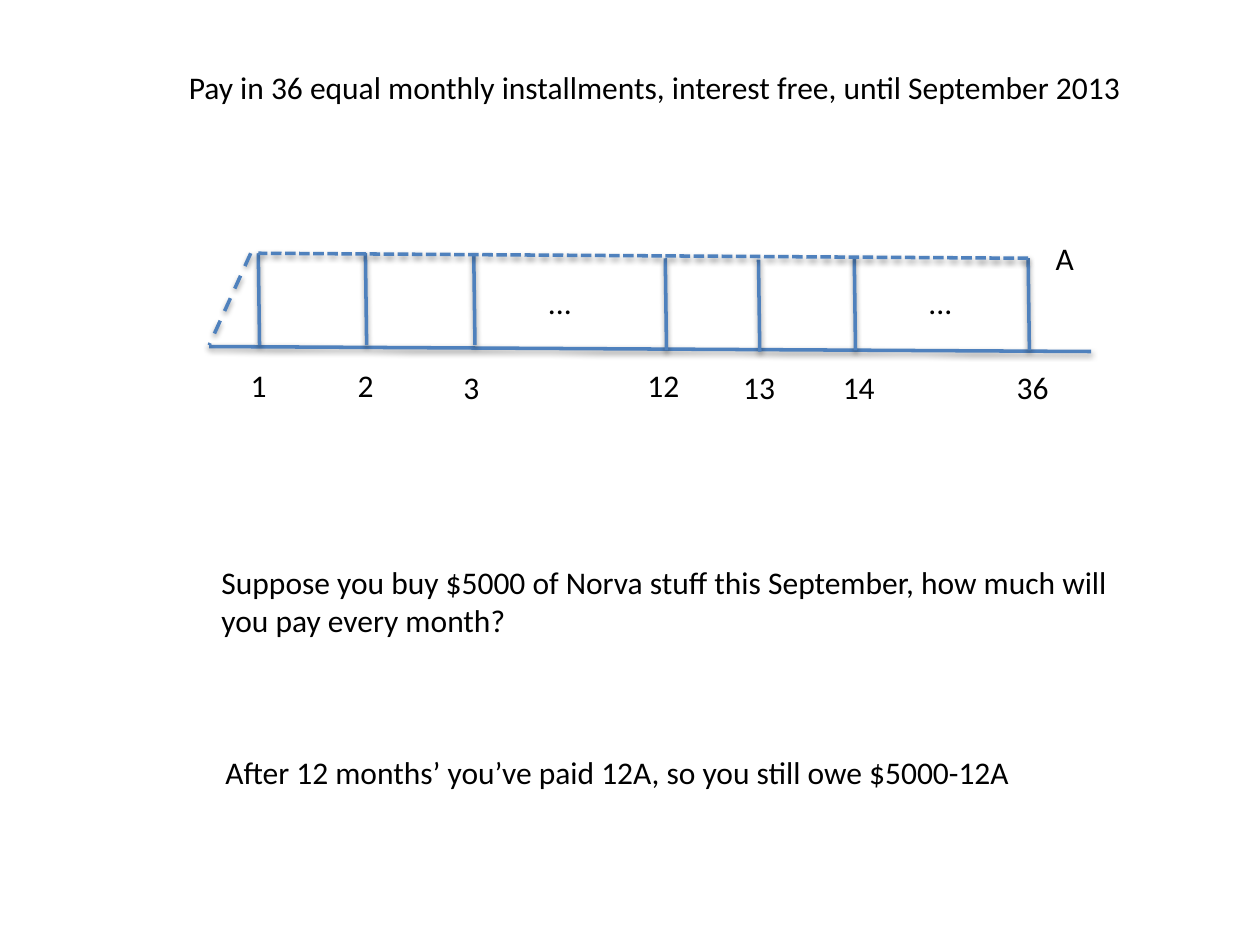
from lxml.etree import SubElement
from pptx import Presentation
from pptx.dml.color import RGBColor
from pptx.enum.dml import MSO_LINE
from pptx.enum.shapes import MSO_CONNECTOR
from pptx.enum.text import MSO_AUTO_SIZE
from pptx.oxml.ns import qn
from pptx.util import Inches, Pt

COLORS = {"line": "4F81BD", "text": "000000", "shadow": "000000"}
FONT = "Calibri"
PAYMENT_HEIGHT = 0.73

# label, label left, label top, label width, wrap, payment foot x, payment foot y
PAYMENTS = [
    ("1", 1.89, 2.86, 0.33, False, 2.06, 2.74),
    ("2", 2.74, 2.86, 0.33, False, 2.91, 2.74),
    ("3", 3.58, 2.87, 0.38, True, 3.77, 2.74),
    ("12", 5.04, 2.86, 0.48, True, 5.29, 2.78),
    ("13", 5.8, 2.87, 0.45, True, 6.03, 2.79),
    ("14", 6.59, 2.87, 0.45, True, 6.79, 2.78),
    ("36", 7.97, 2.87, 0.48, True, 8.17, 2.78),
]


def add_shadow(connector):
    """Give a connector a soft shadow that falls straight down."""
    effects = SubElement(connector._element.spPr, qn("a:effectLst"))
    shadow = SubElement(effects, qn("a:outerShdw"), blurRad="40000",
                        dist="20000", dir="5400000", rotWithShape="0")
    color = SubElement(shadow, qn("a:srgbClr"), val=COLORS["shadow"])
    SubElement(color, qn("a:alpha"), val="38000")


def add_line(page, start, end, dash=None):
    """Draw a shadowed line between two points given in inches."""
    points = [Inches(value) for value in (*start, *end)]
    connector = page.shapes.add_connector(MSO_CONNECTOR.STRAIGHT, *points)
    connector.line.color.rgb = RGBColor.from_string(COLORS["line"])
    connector.line.width = Pt(2)
    if dash is not None:
        connector.line.dash_style = dash
    add_shadow(connector)


def add_text(page, text, left, top, width, height=0.4, wrap=False):
    """Place a text box whose lines become paragraphs."""
    box = page.shapes.add_textbox(Inches(left), Inches(top), Inches(width), Inches(height))
    frame = box.text_frame
    frame.word_wrap = wrap
    frame.auto_size = MSO_AUTO_SIZE.SHAPE_TO_FIT_TEXT
    frame.text = text
    for para in frame.paragraphs:
        for span in para.runs:
            span.font.name = FONT
            span.font.size = Pt(18)
            span.font.color.rgb = RGBColor.from_string(COLORS["text"])


def add_payment(page, label, left, top, width, wrap, foot_x, foot_y):
    """Draw one monthly payment and its month number."""
    add_line(page, (foot_x, foot_y), (foot_x - 0.01, foot_y - PAYMENT_HEIGHT))
    add_text(page, label, left, top, width, wrap=wrap)


def add_cash_flow(page):
    """Draw the timeline with its payments and dashed outline."""
    add_line(page, (1.66, 2.75), (8.66, 2.79))
    for payment in PAYMENTS:
        add_payment(page, *payment)
    for left in (4.25, 7.27):
        add_text(page, "...", left, 2.2, 0.39)
    add_line(page, (8.16, 2.05), (2.05, 2.01), MSO_LINE.SQUARE_DOT)
    add_line(page, (1.99, 2.01), (1.66, 2.74), MSO_LINE.DASH)
    add_text(page, "A", 8.28, 1.85, 0.35)


def main():
    """Build and save the installment slide."""
    deck = Presentation()
    deck.slide_width, deck.slide_height = Inches(10), Inches(7.5)
    page = deck.slides.add_slide(deck.slide_layouts[6])
    add_text(page, "Pay in 36 equal monthly installments, interest free, until September 2013",
             1.4, 0.49, 7.78)
    add_cash_flow(page)
    add_text(page, "Suppose you buy $5000 of Norva stuff this September, how much will\n"
             "you pay every month?", 1.66, 4.42, 7.27, 0.71)
    add_text(page, "After 12 months’ you’ve paid 12A, so you still owe $5000-12A",
             1.69, 5.93, 6.51)
    deck.save("out.pptx")


if __name__ == "__main__":
    main()
